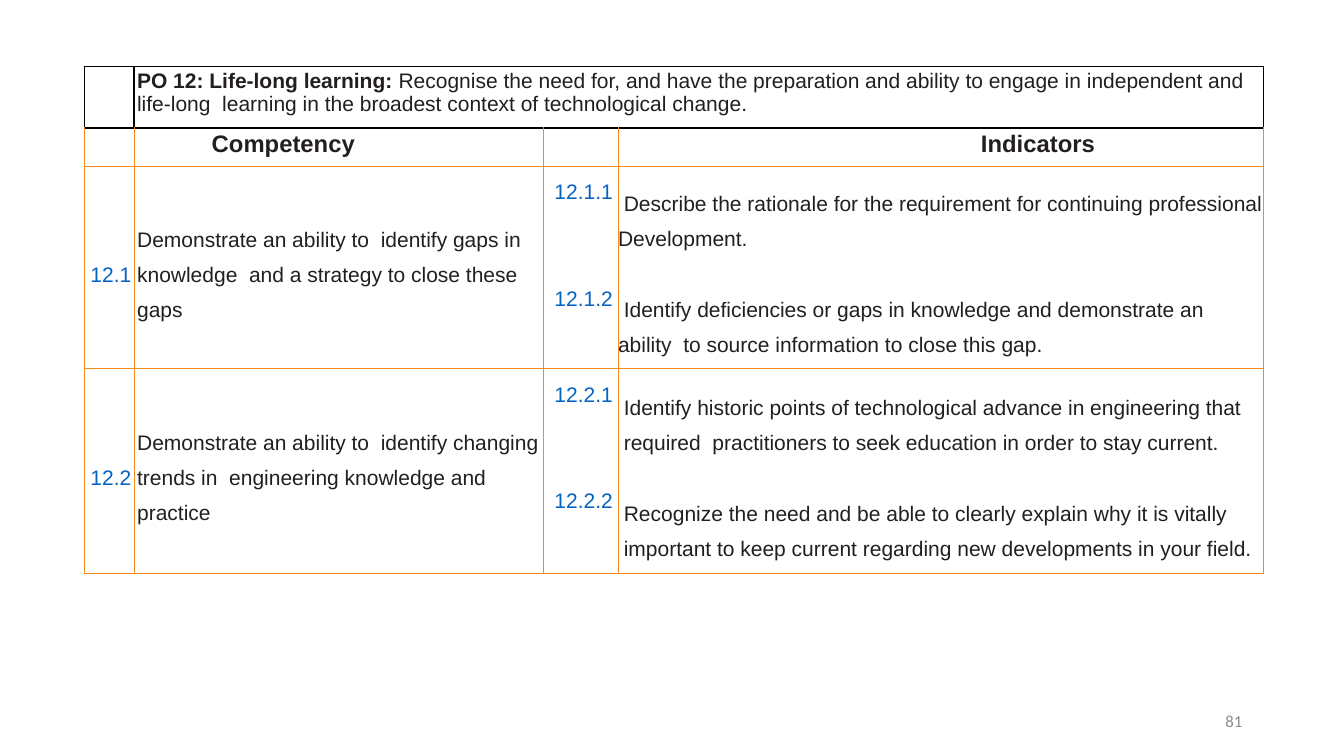
"""Build the slide on life-long learning: a table of competencies and indicators."""
from lxml.etree import SubElement
from pptx import Presentation
from pptx.dml.color import RGBColor
from pptx.enum.text import MSO_ANCHOR, PP_ALIGN
from pptx.oxml.ns import qn
from pptx.util import Inches, Pt

COLORS = {"ink": "231F20", "link": "0563C1", "grid": "F68B1E", "frame": "000000", "page": "8C8C8C"}


def write(para, text, size=15, color="ink", bold=False, font="Arial",
          left=0, lines=1.0, before=0, align=PP_ALIGN.LEFT):
    run = para.add_run()
    run.text = text
    run.font.size = Pt(size)
    run.font.bold = bold
    run.font.name = font
    run.font.color.rgb = RGBColor.from_string(COLORS[color])
    para.alignment = align
    para.line_spacing = lines
    para.space_before = Pt(before)
    para._p.get_or_add_pPr().set("marL", str(Inches(left)))


def border(cell, sides, color, width):
    props = cell._tc.get_or_add_tcPr()
    for side in sides:
        line = SubElement(props, qn(f"a:ln{side}"), w=str(Pt(width)))
        fill = SubElement(line, qn("a:solidFill"))
        SubElement(fill, qn("a:srgbClr"), val=COLORS[color])


deck = Presentation()
deck.slide_width, deck.slide_height = Inches(13.33), Inches(7.5)
slide = deck.slides.add_slide(deck.slide_layouts[6])

widths = [0.49, 4.06, 0.74, 6.4]
heights = [0.61, 0.38, 2.01, 2.03]
holder = slide.shapes.add_table(4, 4, Inches(0.84), Inches(0.66), Inches(sum(widths)), Inches(sum(heights)))
table = holder.table
table.first_row = table.horz_banding = False
table._tbl.tblPr.find(qn("a:tableStyleId")).text = "{2D5ABB26-0587-4C30-8999-92F81FD0307C}"
for col, width in zip(table.columns, widths):
    col.width = Inches(width)
for row, height in zip(table.rows, heights):
    row.height = Inches(height)

for i, row in enumerate(table.rows):
    for j, cell in enumerate(row.cells):
        cell.margin_left = cell.margin_right = cell.margin_bottom = 0
        cell.margin_top = Inches(0.03)
        cell.vertical_anchor = MSO_ANCHOR.MIDDLE if i > 1 and j != 2 else MSO_ANCHOR.TOP
        if i == 0:
            border(cell, "LRTB", "frame", 1.25)
        elif i == 1:
            border(cell, "LR", "grid", 0.75)
            border(cell, "T", "frame", 1.25)
            border(cell, "B", "grid", 0.75)
        else:
            border(cell, "LRTB", "grid", 0.75)
        cell.fill.background()
table.cell(0, 1).merge(table.cell(0, 3))

goal = table.cell(0, 1).text_frame.paragraphs[0]
write(goal, "PO 12: Life-long learning: ", bold=True, left=0.03)
write(goal, "Recognise the need for, and have the preparation and ability to engage in independent "
      "and life-long  learning in the broadest context of technological change.", left=0.03)
for j, text, left in [(1, "Competency", 0.77), (3, "Indicators", 3.6)]:
    write(table.cell(1, j).text_frame.paragraphs[0], text, size=17, bold=True, left=left)

link = {"color": "link", "align": PP_ALIGN.CENTER}
skills = [
    ("12.1",
     ["Demonstrate an ability to  identify gaps in", "knowledge  and a strategy to close these", "gaps"],
     [" 12.1.1", " 12.1.2"],
     [[" Describe the rationale for the requirement for continuing professional Development."],
      [" Identify deficiencies or gaps in knowledge and demonstrate an ability  to source "
       "information to close this gap."]]),
    ("12.2",
     ["Demonstrate an ability to  identify changing", "trends in  engineering knowledge and", "practice"],
     [" 12.2.1", " 12.2.2"],
     [[" Identify historic points of technological advance in engineering that",
       " required  practitioners to seek education in order to stay current."],
      [" Recognize the need and be able to clearly explain why it is vitally",
       " important to keep current regarding new developments in your field."]]),
]
for i, (code, skill, marks, signs) in enumerate(skills, 2):
    parts = [
        ([[code]], 0, {**link, "left": 0.03}),
        ([skill], 0, {"left": 0.03}),
        ([[mark] for mark in marks], 51, link),
        (signs, 25.5, {}),
    ]
    for j, (groups, gap, style) in enumerate(parts):
        frame = table.cell(i, j).text_frame
        for g, group in enumerate(groups):
            for n, text in enumerate(group):
                para = frame.add_paragraph() if g or n else frame.paragraphs[0]
                write(para, text, lines=1.5, before=gap if g and not n else 0, **style)

page = slide.shapes.add_textbox(Inches(9.42), Inches(6.95), Inches(3), Inches(0.4)).text_frame
page.word_wrap = True
page.vertical_anchor = MSO_ANCHOR.MIDDLE
write(page.paragraphs[0], "81", size=12, color="page", font="Calibri", align=PP_ALIGN.RIGHT)

deck.save("out.pptx")
